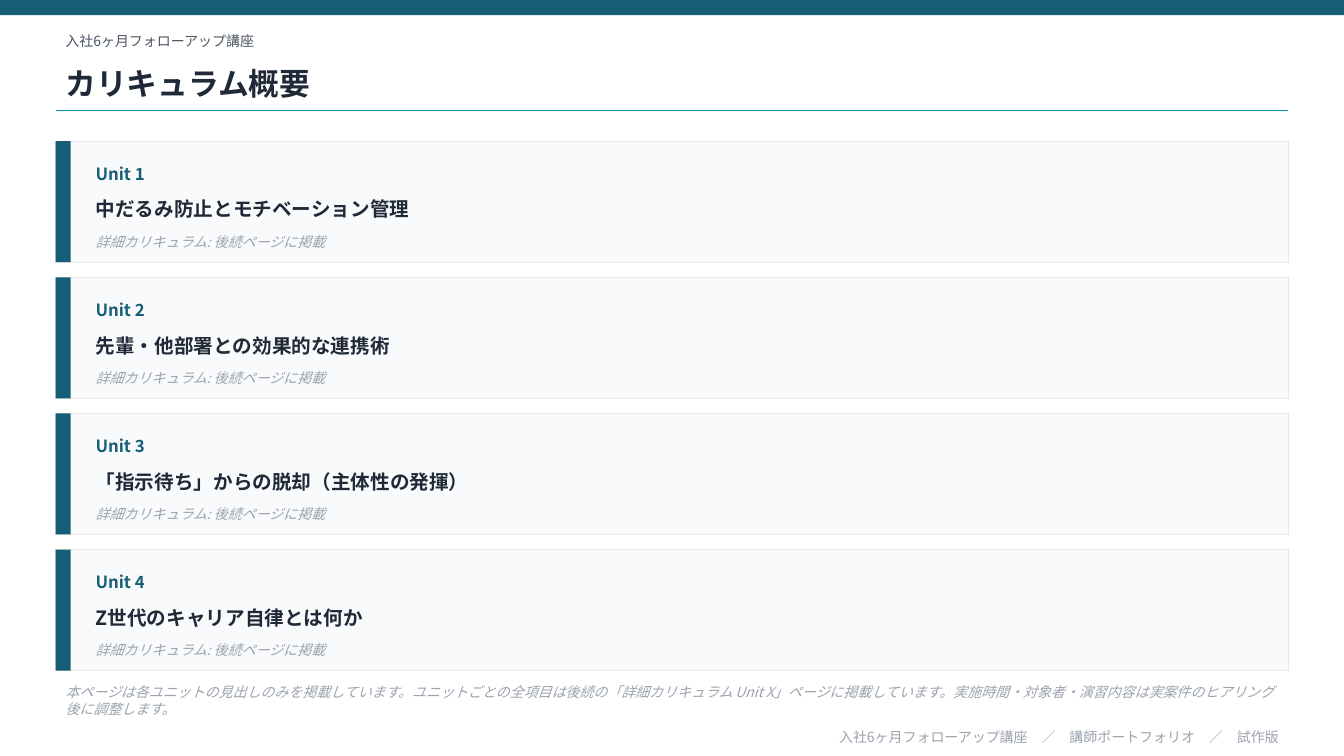
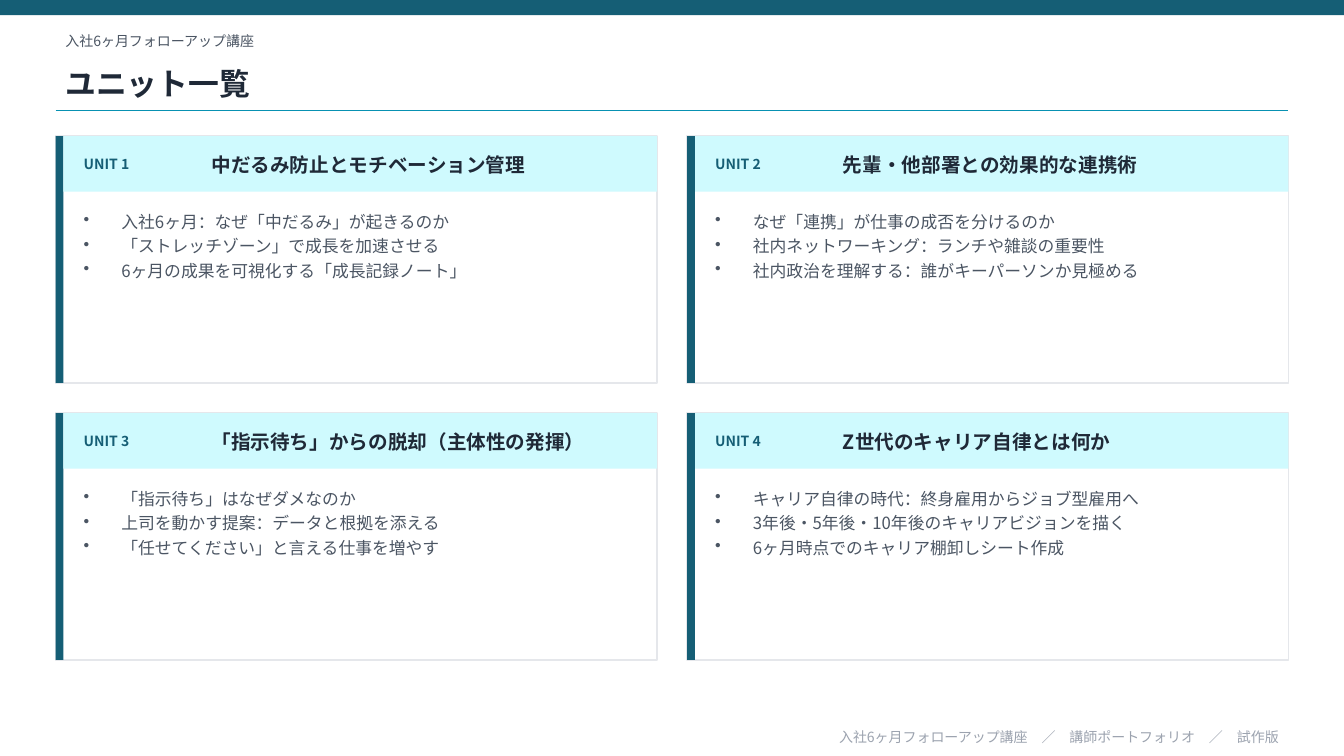
from lxml import etree
from pptx import Presentation
from pptx.dml.color import RGBColor
from pptx.enum.shapes import MSO_CONNECTOR, MSO_SHAPE
from pptx.enum.text import MSO_ANCHOR, PP_ALIGN
from pptx.oxml.ns import qn
from pptx.util import Cm, Pt

# Content
COURSE = "入社6ヶ月フォローアップ講座"
FOOTER = COURSE + "　／　講師ポートフォリオ　／　試作版"
OVERVIEW_TITLE = "カリキュラム概要"
LIST_TITLE = "ユニット一覧"
DETAIL = "詳細カリキュラム: 後続ページに掲載"
NOTE = (
    "本ページは各ユニットの見出しのみを掲載しています。"
    "ユニットごとの全項目は後続の「詳細カリキュラム Unit X」ページに掲載しています。"
    "実施時間・対象者・演習内容は実案件のヒアリング後に調整します。"
)
UNITS = [
    ("中だるみ防止とモチベーション管理", [
        "入社6ヶ月：なぜ「中だるみ」が起きるのか",
        "「ストレッチゾーン」で成長を加速させる",
        "6ヶ月の成果を可視化する「成長記録ノート」",
    ]),
    ("先輩・他部署との効果的な連携術", [
        "なぜ「連携」が仕事の成否を分けるのか",
        "社内ネットワーキング：ランチや雑談の重要性",
        "社内政治を理解する：誰がキーパーソンか見極める",
    ]),
    ("「指示待ち」からの脱却（主体性の発揮）", [
        "「指示待ち」はなぜダメなのか",
        "上司を動かす提案：データと根拠を添える",
        "「任せてください」と言える仕事を増やす",
    ]),
    ("Z世代のキャリア自律とは何か", [
        "キャリア自律の時代：終身雇用からジョブ型雇用へ",
        "3年後・5年後・10年後のキャリアビジョンを描く",
        "6ヶ月時点でのキャリア棚卸しシート作成",
    ]),
]

# Shared style
FONT = "Noto Sans CJK JP"
TEAL = RGBColor(0x15, 0x5E, 0x75)
CYAN = RGBColor(0x08, 0x91, 0xB2)
PALE_CYAN = RGBColor(0xCF, 0xFA, 0xFE)
INK = RGBColor(0x1F, 0x29, 0x37)
SLATE = RGBColor(0x4B, 0x55, 0x63)
MUTED = RGBColor(0x9C, 0xA3, 0xAF)
BORDER = RGBColor(0xE5, 0xE7, 0xEB)
PANEL = RGBColor(0xF9, 0xFA, 0xFB)
WHITE = RGBColor(0xFF, 0xFF, 0xFF)
RECTANGLE = MSO_SHAPE.RECTANGLE
STRAIGHT = MSO_CONNECTOR.STRAIGHT
MIDDLE, TOP = MSO_ANCHOR.MIDDLE, MSO_ANCHOR.TOP
LEFT, RIGHT = PP_ALIGN.LEFT, PP_ALIGN.RIGHT

# Page grid, in centimetres
PAGE_W, PAGE_H = 33.87, 19.05
MARGIN = 1.4
BODY_W = 31.07
RULE_Y = 2.79


def add_box(slide, x, y, w, h, fill, border_pt=None):
    box = slide.shapes.add_shape(RECTANGLE, Cm(x), Cm(y), Cm(w), Cm(h))
    box.shadow.inherit = False
    box.fill.solid()
    box.fill.fore_color.rgb = fill
    if border_pt:
        box.line.color.rgb = BORDER
        box.line.width = Pt(border_pt)
    else:
        box.line.fill.background()


def add_text(slide, x, y, w, h, text, size, color, bold=False, italic=False,
             align=LEFT, anchor=MIDDLE):
    frame = slide.shapes.add_textbox(Cm(x), Cm(y), Cm(w), Cm(h)).text_frame
    frame.word_wrap = True
    frame.vertical_anchor = anchor
    frame.text = text
    for paragraph in frame.paragraphs:
        paragraph.alignment = align
        for run in paragraph.runs:
            font = run.font
            font.size, font.bold, font.italic = Pt(size), bold, italic
            font.color.rgb = color
            font.name = FONT
            east_asian = etree.SubElement(run._r.get_or_add_rPr(), qn("a:ea"))
            east_asian.set("typeface", FONT)
    return frame


def add_bullets(frame, indent, space_after):
    for paragraph in frame.paragraphs:
        paragraph.space_after = Pt(space_after)
        properties = paragraph._p.get_or_add_pPr()
        properties.set("marL", str(Cm(indent)))
        properties.set("indent", str(-Cm(indent)))
        etree.SubElement(properties, qn("a:buChar")).set("char", "•")


def add_page(deck, title):
    slide = deck.slides.add_slide(deck.slide_layouts[6])
    add_box(slide, 0, 0, PAGE_W, 0.38, TEAL)
    add_text(slide, MARGIN, 0.64, BODY_W, 0.76, COURSE, 10, SLATE)
    add_text(slide, MARGIN, 1.4, BODY_W, 1.4, title, 22, INK, bold=True)
    rule = slide.shapes.add_connector(
        STRAIGHT, Cm(MARGIN), Cm(RULE_Y), Cm(MARGIN + BODY_W), Cm(RULE_Y))
    rule.line.color.rgb = CYAN
    rule.line.width = Pt(1)
    etree.SubElement(rule._element.spPr, qn("a:effectLst"))
    add_text(slide, MARGIN, 18.29, BODY_W, 0.56, FOOTER, 10, MUTED, align=RIGHT)
    return slide


def add_overview(deck):
    slide = add_page(deck, OVERVIEW_TITLE)
    first_y, row_h, gap = 3.56, 3.05, 0.38
    text_x, text_w = MARGIN + 0.76, 29.79
    for index, (name, _) in enumerate(UNITS):
        y = first_y + index * (row_h + gap)
        add_box(slide, MARGIN, y, BODY_W, row_h, PANEL, border_pt=0.5)
        add_box(slide, MARGIN, y, 0.38, row_h, TEAL)
        add_text(slide, text_x, y + 0.3, 3.81, 1.02, f"Unit {index + 1}", 12, TEAL,
                 bold=True)
        add_text(slide, text_x, y + 1.14, text_w, 1.14, name, 14, INK, bold=True)
        add_text(slide, text_x, y + 2.16, text_w, 0.76, DETAIL, 10, MUTED, italic=True)
    add_text(slide, MARGIN, 17.15, BODY_W, 1.02, NOTE, 10, MUTED, italic=True)


def add_unit_list(deck):
    slide = add_page(deck, LIST_TITLE)
    first_y, card_h, gap, stripe_w = 3.43, 6.22, 0.76, 0.2
    columns = 2
    card_w = (BODY_W - gap) / columns
    for index, (name, topics) in enumerate(UNITS):
        row, column = divmod(index, columns)
        x = MARGIN + column * (card_w + gap)
        y = first_y + row * (card_h + gap)
        add_box(slide, x, y, card_w, card_h, WHITE, border_pt=1)
        add_box(slide, x, y, stripe_w, card_h, TEAL)
        add_box(slide, x + stripe_w, y, card_w - stripe_w, 1.4, PALE_CYAN)
        add_text(slide, x + 0.46, y + 0.2, 3.05, 1.02, f"UNIT {index + 1}", 10, TEAL,
                 bold=True)
        add_text(slide, x + 3.68, y + 0.2, 11.1, 1.02, name, 14, INK, bold=True)
        topic_frame = add_text(slide, x + 0.46, y + 1.78, 14.25, 4.06,
                               "\n".join(topics), 12, SLATE, anchor=TOP)
        add_bullets(topic_frame, indent=0.95, space_after=3)


def main():
    deck = Presentation()
    deck.slide_width, deck.slide_height = Cm(PAGE_W), Cm(PAGE_H)
    add_overview(deck)
    add_unit_list(deck)
    deck.save("out.pptx")


if __name__ == "__main__":
    main()
